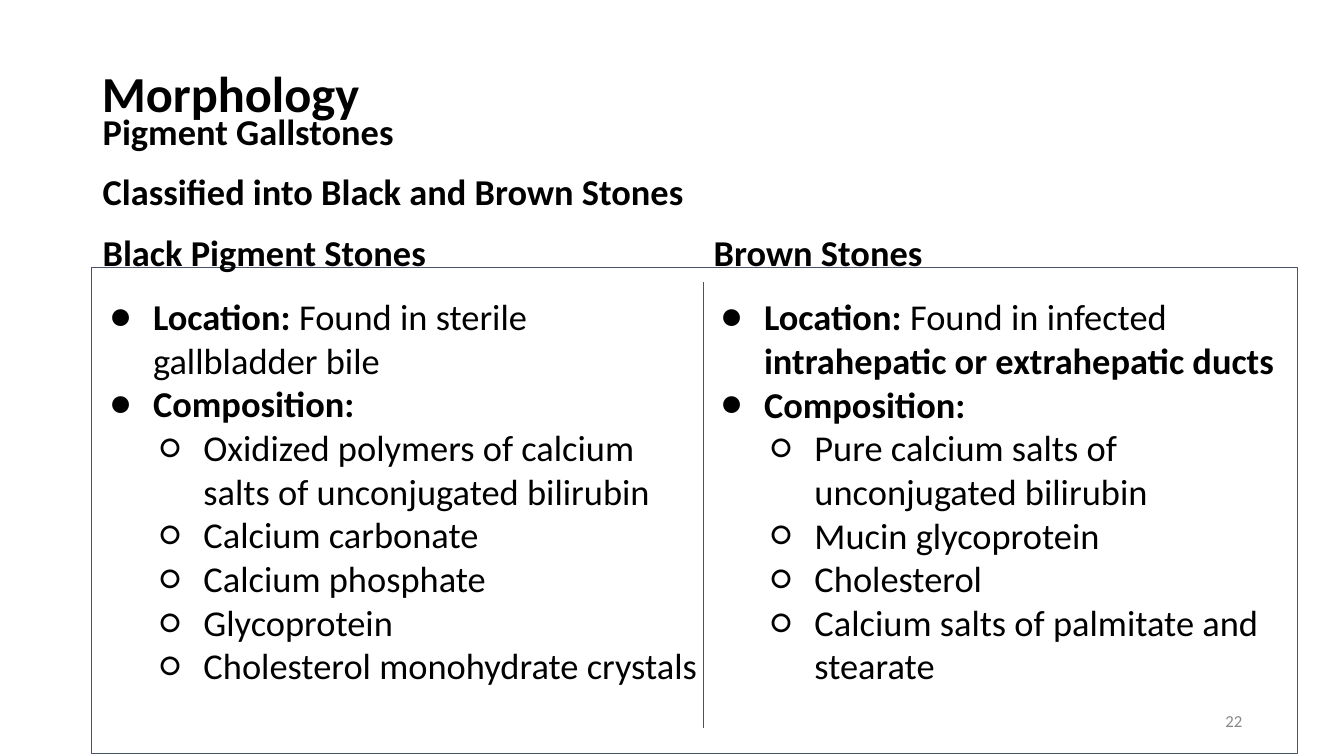
from lxml import etree
from pptx import Presentation
from pptx.dml.color import RGBColor
from pptx.enum.shapes import MSO_CONNECTOR, MSO_SHAPE
from pptx.enum.text import MSO_ANCHOR, MSO_AUTO_SIZE, PP_ALIGN
from pptx.oxml.ns import qn
from pptx.util import Inches, Pt

RECT, LINE = MSO_SHAPE.RECTANGLE, MSO_CONNECTOR.STRAIGHT
LEFT, RIGHT = PP_ALIGN.LEFT, PP_ALIGN.RIGHT
MIDDLE, FIXED = MSO_ANCHOR.MIDDLE, MSO_AUTO_SIZE.NONE
BLACK, SLATE, GREY, WHITE = "000000", "44546A", "888888", "FFFFFF"

# Each line: level (None for a heading) and its runs; odd runs are plain
STONES = [
    ((0.92, 1.03, 6.1, 6.86), [
        (None, ["Pigment Gallstones"]),
        (None, ["Classified into Black and Brown Stones"]),
        (None, ["Black Pigment Stones"]),
        (0, ["Location:", " Found in sterile gallbladder bile"]),
        (0, ["Composition:"]),
        (1, ["Oxidized polymers of calcium salts of unconjugated bilirubin"]),
        (1, ["Calcium carbonate"]),
        (1, ["Calcium phosphate"]),
        (1, ["Glycoprotein"]),
        (1, ["Cholesterol monohydrate crystals"]),
    ]),
    ((6.98, 2.23, 6.1, 4.83), [
        (None, ["Brown Stones"]),
        (0, ["Location:", " Found in infected ", "intrahepatic or extrahepatic ducts"]),
        (0, ["Composition:"]),
        (1, ["Pure calcium salts of unconjugated bilirubin"]),
        (1, ["Mucin glycoprotein"]),
        (1, ["Cholesterol"]),
        (1, ["Calcium salts of palmitate and stearate"]),
    ]),
]


def rgb(code):
    return RGBColor.from_string(code)


def style(para, size, color=BLACK, bold=False):
    font = para.font
    font.name, font.size, font.bold = "Calibri", Pt(size), bold
    font.color.rgb = rgb(color)


prs = Presentation()
prs.slide_width, prs.slide_height = Inches(13.33), Inches(7.5)
slide = prs.slides.add_slide(prs.slide_layouts[5])
shapes = slide.shapes

# Panel behind both columns
panel = shapes.add_shape(RECT, *map(Inches, (0.91, 2.65, 11.96, 4.83)))
panel.shadow.inherit = False
panel.fill.solid()
panel.fill.fore_color.rgb = rgb(WHITE)
panel.line.color.rgb = rgb(SLATE)
panel.line.width = Pt(0.75)

# Title
title = shapes.title
title.left, title.top, title.width, title.height = map(Inches, (0.91, 0.15, 11.5, 1.45))
frame = title.text_frame
frame.text = "Morphology"
frame.vertical_anchor, frame.auto_size = MIDDLE, FIXED
para = frame.paragraphs[0]
para.alignment, para.line_spacing, para.space_after = LEFT, 1.15, Pt(4)
style(para, 36, bold=True)

# Columns
for place, lines in STONES:
    frame = shapes.add_textbox(*map(Inches, place)).text_frame
    frame.word_wrap = True
    last = None
    for i, (level, runs) in enumerate(lines):
        para = frame.paragraphs[0] if i == 0 else frame.add_paragraph()
        if level is None:
            para.space_before = Pt(12 if i else 0)
        else:
            para.level = level
            para.space_before = Pt(15 if last is None else 0)
            props = para._p.get_or_add_pPr()
            props.set("marL", str(Inches(0.5 + 0.5 * level)))
            props.set("indent", str(Inches(-0.43)))
            tint = etree.SubElement(props, qn("a:buClr"))
            etree.SubElement(tint, qn("a:srgbClr"), val=BLACK)
            etree.SubElement(props, qn("a:buFont"), typeface="Calibri")
            etree.SubElement(props, qn("a:buChar"), char="●○"[level])
        style(para, 26, bold=level != 1)
        for j, text in enumerate(runs):
            run = para.add_run()
            run.text = text
            if j % 2:
                run.font.bold = False
        last = level

# Slide number
box = shapes.add_textbox(*map(Inches, (9.42, 6.95, 3, 0.4)))
frame = box.text_frame
frame.word_wrap, frame.vertical_anchor = True, MIDDLE
para = frame.paragraphs[0]
para.text, para.alignment = "22", RIGHT
style(para, 12, GREY)

# Divider
rule = shapes.add_connector(LINE, *map(Inches, (6.98, 2.8, 6.98, 7.22)))
rule.line.color.rgb = rgb(SLATE)
rule.line.width = Pt(0.75)
etree.SubElement(rule._element.spPr, qn("a:effectLst"))

prs.save("out.pptx")
